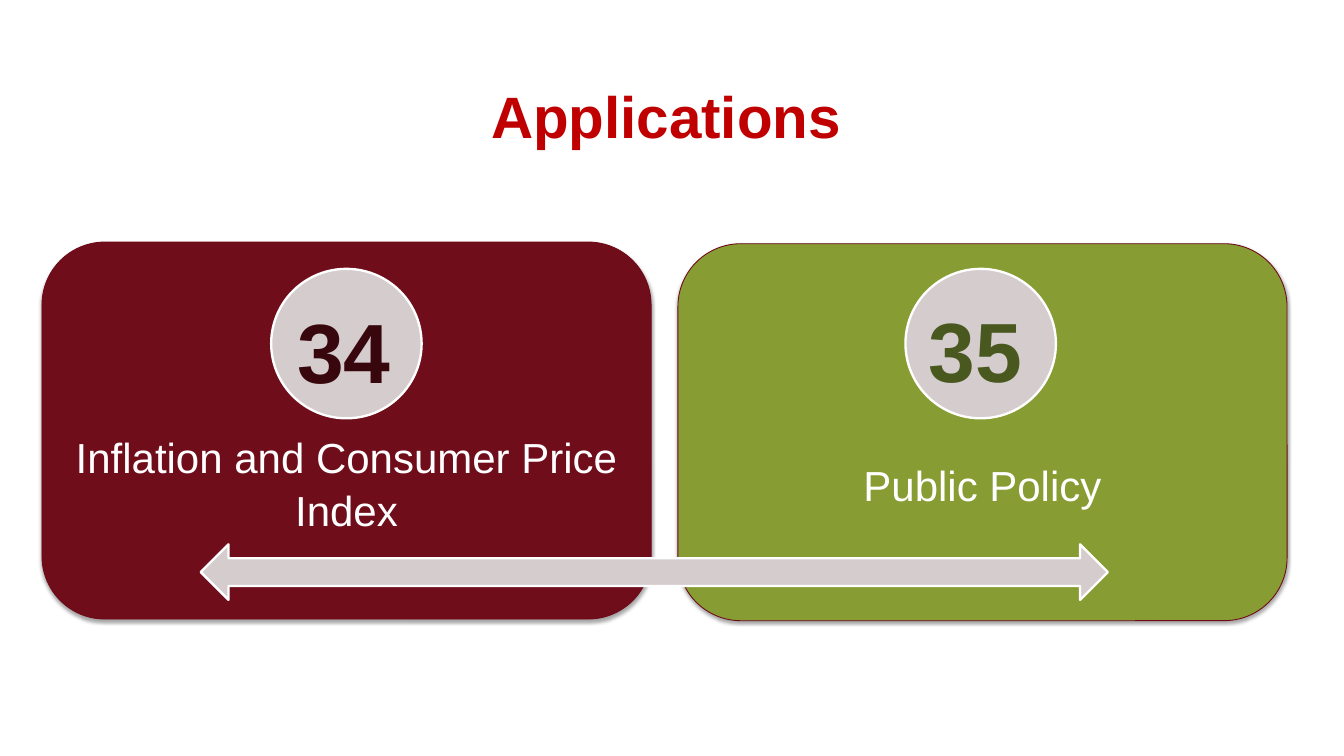
from dataclasses import dataclass

from lxml import etree
from pptx import Presentation
from pptx import util as u
from pptx.dml.color import RGBColor
from pptx.enum import shapes, text
from pptx.oxml import ns

FONT = "Arial"
WHITE, GREY, MAROON = "FFFFFF", "D5CCCD", "6F0918"
CARD_WIDTH, CARD_HEIGHT = 18.42, 11.4
ZERO_MARGINS = {f"margin_{side}": 0 for side in ("left", "top", "right", "bottom")}


@dataclass
class Box:
    left: float
    top: float
    width: float
    height: float

    def lengths(self) -> list[u.Cm]:
        return [u.Cm(value) for value in (self.left, self.top, self.width, self.height)]


@dataclass
class Chapter:
    number: str
    name: str
    card: Box
    circle: Box
    number_box: Box
    fill: str
    number_color: str


CHAPTERS = [
    Chapter("35", "Public Policy", Box(20.5, 7.37, CARD_WIDTH, CARD_HEIGHT),
            Box(27.38, 8.13, 4.55, 4.52), Box(27.84, 8.71, 3.63, 3.33),
            "879C32", "49581E"),
    Chapter("34", "Inflation and Consumer Price Index",
            Box(1.27, 7.32, CARD_WIDTH, CARD_HEIGHT),
            Box(8.2, 8.13, 4.55, 4.52), Box(8.74, 8.74, 3.89, 3.33),
            "700D1B", "38060D"),
]


def rgb(color: str) -> RGBColor:
    return RGBColor.from_string(color)


def set_values(target, values: dict) -> None:
    for name, value in values.items():
        setattr(target, name, value)


def write(shape, words: str, size: float, color: str, bold: bool = False,
          alignment=text.PP_ALIGN.CENTER, frame_format: dict | None = None) -> None:
    frame = shape.text_frame
    set_values(frame, {"word_wrap": True} | (frame_format or {}))
    paragraph = frame.paragraphs[0]
    paragraph.text = words
    set_values(paragraph, {"alignment": alignment, "line_spacing": 1.06})
    set_values(paragraph.font, {"name": FONT, "size": u.Pt(size), "bold": bold})
    paragraph.font.color.rgb = rgb(color)


def add_shape(slide, kind, box: Box, fill: str, line: str, line_width: float):
    shape = slide.shapes.add_shape(kind, *box.lengths())
    shape.shadow.inherit = False
    shape.fill.solid()
    shape.fill.fore_color.rgb = rgb(fill)
    shape.line.color.rgb = rgb(line)
    shape.line.width = u.Pt(line_width)
    return shape


def add_shadow(shape) -> None:
    effects = shape.element.spPr.find(ns.qn("a:effectLst"))
    shadow = etree.SubElement(
        effects, ns.qn("a:outerShdw"), blurRad=str(u.Pt(3.1)), dist=str(u.Pt(1.8)),
        dir="5400000", rotWithShape="0")
    color = etree.SubElement(shadow, ns.qn("a:srgbClr"), val="000000")
    etree.SubElement(color, ns.qn("a:alpha"), val="35000")


def main() -> None:
    presentation = Presentation()
    presentation.slide_width, presentation.slide_height = u.Cm(40.64), u.Cm(22.86)
    slide = presentation.slides.add_slide(presentation.slide_layouts[6])

    # Cards, with their names below the circles
    for chapter in CHAPTERS:
        card = add_shape(slide, shapes.MSO_SHAPE.ROUNDED_RECTANGLE, chapter.card,
                         chapter.fill, MAROON, 0.75)
        add_shadow(card)
        write(card, chapter.name, 36, WHITE, frame_format={
            "vertical_anchor": text.MSO_ANCHOR.MIDDLE, "margin_top": u.Cm(3.21)})

    # Title
    title = slide.shapes.add_textbox(*Box(6.43, 2.31, 27.43, 2.16).lengths())
    write(title, "Applications", 50, "C00000", bold=True, frame_format=ZERO_MARGINS)

    # Numbered circles
    for chapter in CHAPTERS:
        add_shape(slide, shapes.MSO_SHAPE.OVAL, chapter.circle, GREY, WHITE, 2)
        number = slide.shapes.add_textbox(*chapter.number_box.lengths())
        write(number, chapter.number, 72, chapter.number_color, bold=True,
              alignment=text.PP_ALIGN.LEFT)

    # Arrow linking the two cards
    add_shape(slide, shapes.MSO_SHAPE.LEFT_RIGHT_ARROW, Box(6.07, 16.46, 27.43, 1.68),
              GREY, WHITE, 2)

    presentation.save("out.pptx")


if __name__ == "__main__":
    main()
